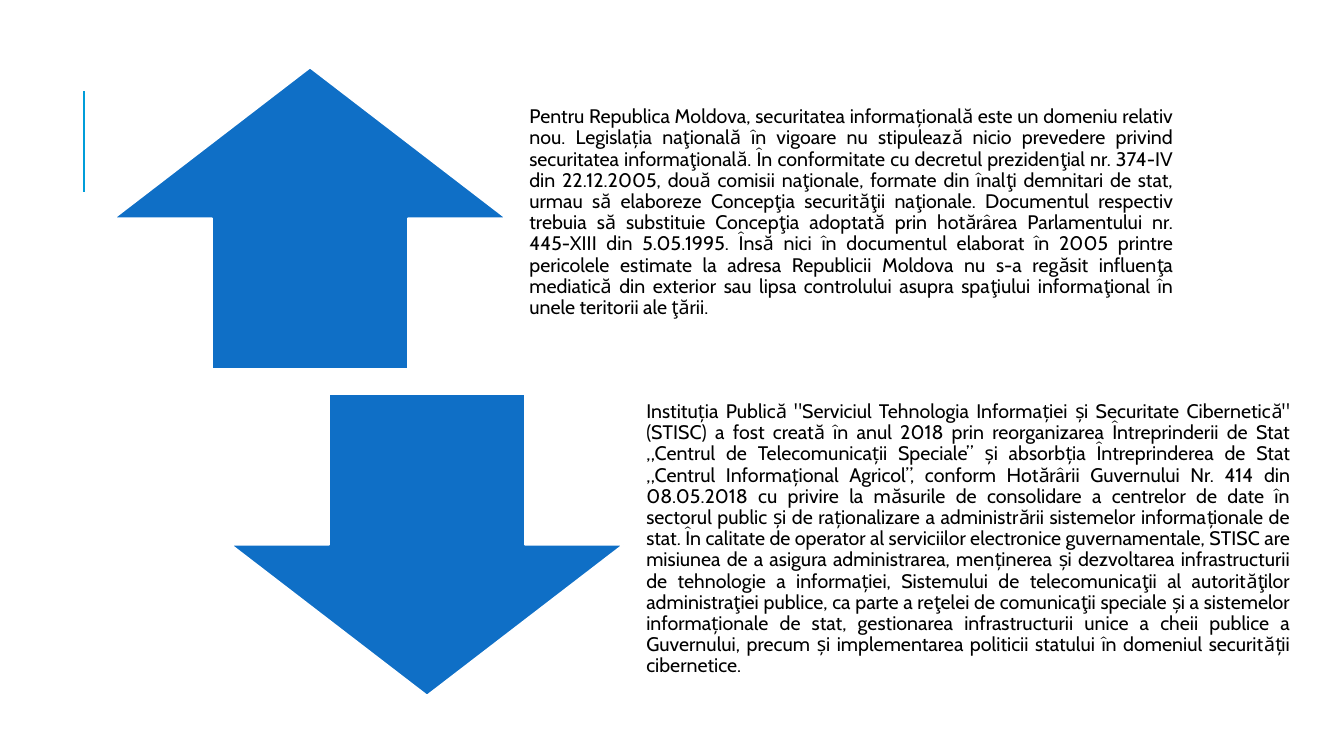
from lxml.etree import SubElement
from pptx import Presentation
from pptx.dml.color import RGBColor
from pptx.enum.shapes import MSO_CONNECTOR, MSO_SHAPE
from pptx.enum.text import MSO_ANCHOR, PP_ALIGN
from pptx.oxml.ns import qn
from pptx.util import Inches, Pt

BLUE = RGBColor(0x0F, 0x6F, 0xC6)
CYAN = RGBColor(0x00, 0x9D, 0xD9)
WHITE = RGBColor(0xFF, 0xFF, 0xFF)
BLACK = RGBColor(0x00, 0x00, 0x00)
FONT = "Cabin"

# Arrow of each row, and the sentences of its paragraph
ROWS = [
    (MSO_SHAPE.UP_ARROW, [
        "Pentru Republica Moldova, securitatea informațională este un domeniu relativ nou.",
        "Legislația naţională în vigoare nu stipulează nicio prevedere privind securitatea "
        "informaţională.",
        "În conformitate cu decretul prezidenţial nr. 374-IV din 22.12.2005, două comisii "
        "naţionale, formate din înalţi demnitari de stat, urmau să elaboreze Concepţia "
        "securităţii naţionale.",
        "Documentul respectiv trebuia să substituie Concepţia adoptată prin hotărârea "
        "Parlamentului nr. 445-XIII din 5.05.1995.",
        "Însă nici în documentul elaborat în 2005 printre pericolele estimate la adresa "
        "Republicii Moldova nu s-a regăsit influenţa mediatică din exterior sau lipsa "
        "controlului asupra spaţiului informaţional în unele teritorii ale ţării.",
    ]),
    (MSO_SHAPE.DOWN_ARROW, [
        "Instituția Publică \"Serviciul Tehnologia Informației și Securitate Cibernetică\" "
        "(STISC) a fost creată în anul 2018 prin reorganizarea Întreprinderii de Stat „Centrul "
        "de Telecomunicații Speciale” și absorbția Întreprinderea de Stat „Centrul "
        "Informațional Agricol”, conform Hotărârii Guvernului Nr. 414 din 08.05.2018 cu privire "
        "la măsurile de consolidare a centrelor de date în sectorul public și de raționalizare "
        "a administrării sistemelor informaționale de stat.",
        "În calitate de operator al serviciilor electronice guvernamentale, STISC are misiunea "
        "de a asigura administrarea, menținerea și dezvoltarea infrastructurii de tehnologie a "
        "informației, Sistemului de telecomunicaţii al autorităţilor administraţiei publice, ca "
        "parte a reţelei de comunicaţii speciale și a sistemelor informaționale de stat, "
        "gestionarea infrastructurii unice a cheii publice a Guvernului, precum și "
        "implementarea politicii statului în domeniul securității cibernetice.",
    ]),
]

# Each row steps down and to the right of the one before, in inches
LEFT, TOP = 1.13, 0.67
STEP_X, STEP_Y = 1.16, 3.24
ARROW_W, TEXT_W, ROW_H = 3.89, 6.61, 2.99
GAP = 0.12


def add_accent_line(slide):
    line = slide.shapes.add_connector(
        MSO_CONNECTOR.STRAIGHT, Inches(0.83), Inches(1.9), Inches(0.83), Inches(0.9))
    line.line.color.rgb = CYAN
    line.line.width = Pt(1.5)
    SubElement(line._element.spPr, qn("a:effectLst"))


def add_arrow(slide, kind, x, y):
    sp = slide.shapes.add_shape(kind, Inches(x), Inches(y), Inches(ARROW_W), Inches(ROW_H))
    sp.shadow.inherit = False
    sp.fill.solid()
    sp.fill.fore_color.rgb = BLUE
    sp.line.color.rgb = WHITE
    sp.line.width = Pt(1.25)


def add_body(slide, text, x, y):
    box = slide.shapes.add_textbox(Inches(x), Inches(y), Inches(TEXT_W), Inches(ROW_H))
    tf = box.text_frame
    tf.word_wrap = True
    tf.vertical_anchor = MSO_ANCHOR.MIDDLE
    tf.margin_left = tf.margin_right = tf.margin_bottom = Inches(0.11)
    tf.margin_top = 0
    p = tf.paragraphs[0]
    p.alignment = PP_ALIGN.JUSTIFY
    p.line_spacing = 0.9
    p.space_after = Pt(5)
    r = p.add_run()
    r.text = text
    r.font.name = FONT
    r.font.size = Pt(14)
    r.font.color.rgb = BLACK


def main():
    prs = Presentation()
    prs.slide_width, prs.slide_height = Inches(13.33), Inches(7.5)
    slide = prs.slides.add_slide(prs.slide_layouts[6])
    add_accent_line(slide)
    for i, (kind, sentences) in enumerate(ROWS):
        x, y = LEFT + i * STEP_X, TOP + i * STEP_Y
        add_arrow(slide, kind, x, y)
        add_body(slide, " ".join(sentences), x + ARROW_W + GAP, y)
    prs.save("out.pptx")


if __name__ == "__main__":
    main()
